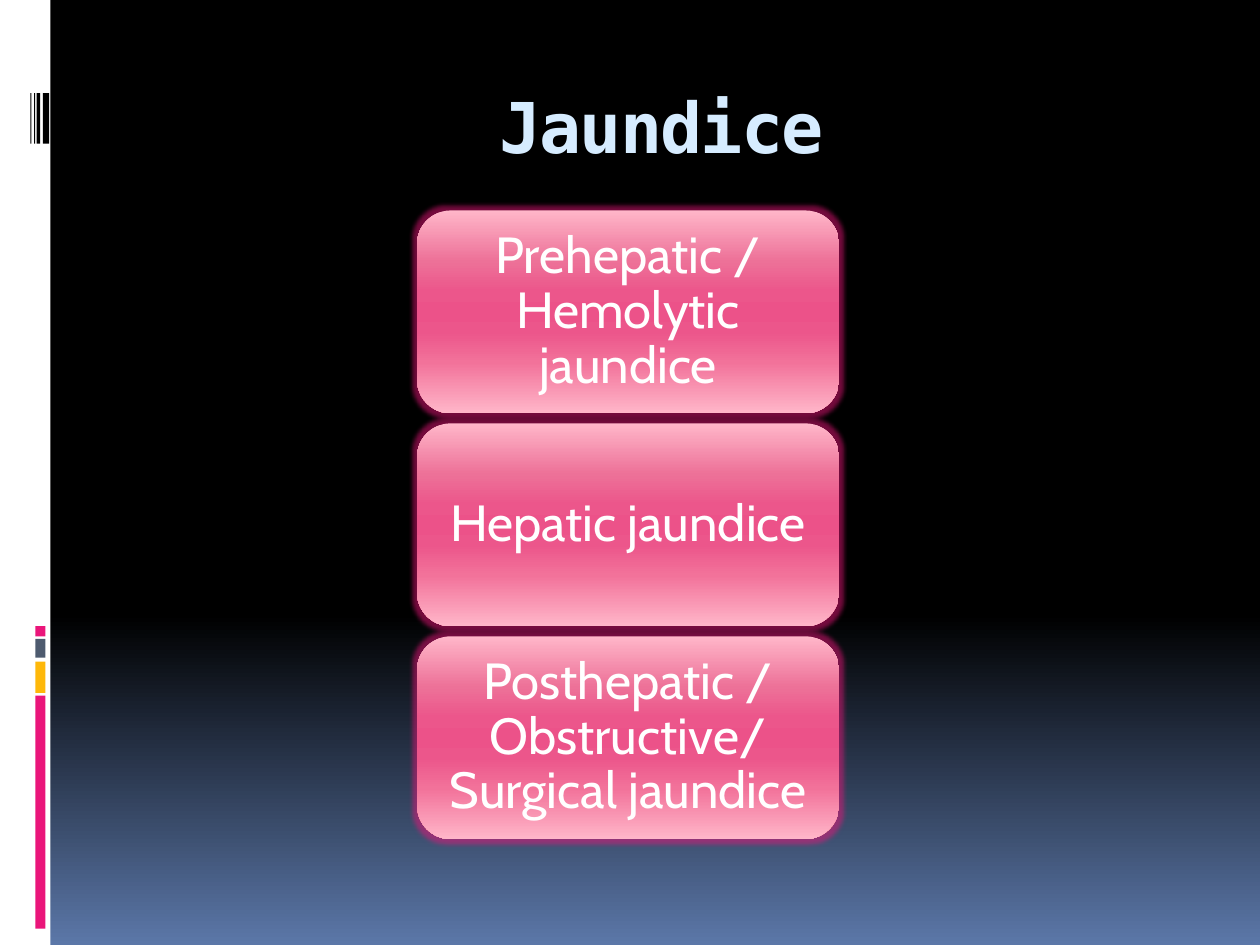
from pptx import Presentation
from pptx.dml.color import RGBColor
from pptx.enum.shapes import MSO_SHAPE
from pptx.enum.text import MSO_ANCHOR, PP_ALIGN
from pptx.oxml import parse_xml
from pptx.oxml.ns import nsdecls, qn
from pptx.util import Inches, Pt

RECTANGLE, ROUNDED = MSO_SHAPE.RECTANGLE, MSO_SHAPE.ROUNDED_RECTANGLE
CENTER, TOP, MIDDLE = PP_ALIGN.CENTER, MSO_ANCHOR.TOP, MSO_ANCHOR.MIDDLE

THEME = {
    "white": "FFFFFF", "black": "000000", "pink": "EA157A",
    "amber": "FEB80A", "slate": "4E5B6F", "title": "D6ECFF",
    "sky": [(0, "000000"), (65, "000000"), (100, "5B77A8")],
    "card": [(0, "FFB6C9"), (25, "ED7198"), (40, "EC568B"), (50, "EC5289"),
             (60, "EC568B"), (75, "F2729A"), (100, "FFB6C9")],
    "title_font": "DejaVu Sans Mono", "title_size": 40,
    "card_font": "Cabin", "card_size": 29,
}


def fill_gradient(fill, element, stops):
    """Fill from top to bottom with (percent, colour) stops."""
    fill.gradient()
    fill.gradient_angle = 270
    stop_list = next(element.iter(qn("a:gsLst")))
    for old_stop in list(stop_list):
        stop_list.remove(old_stop)
    for percent, colour in stops:
        stop_list.append(parse_xml(
            f'<a:gs {nsdecls("a")} pos="{percent * 1000}">'
            f'<a:srgbClr val="{colour}"/></a:gs>'))


def add_text(frame, text, font, size, colour):
    """Write one centred paragraph and return it with its run."""
    frame.word_wrap = True
    para = frame.paragraphs[0]
    para.alignment = CENTER
    span = para.add_run()
    span.text = text
    span.font.name, span.font.size = font, Pt(size)
    span.font.color.rgb = RGBColor.from_string(colour)
    return para, span


deck = Presentation()
deck.slide_width, deck.slide_height = Inches(10), Inches(7.5)
page = deck.slides.add_slide(deck.slide_layouts[6])
fill_gradient(page.background.fill, page.element, THEME["sky"])

# Side strip: white band, coloured blocks, thin black bars
strip = [(0, 0, 0.4, 7.5, "white")]
strip += [(0.28, top, 0.08, height, colour) for top, height, colour in (
    (5.52, 1.85, "pink"), (5.25, 0.25, "amber"),
    (5.07, 0.15, "slate"), (4.97, 0.08, "pink"))]
strip += [(left, 0.74, width, 0.4, "black") for left, width in (
    (0.34, 0.05), (0.29, 0.03), (0.27, 0.01), (0.24, 0.01))]
for left, top, width, height, colour in strip:
    bar = page.shapes.add_shape(
        RECTANGLE, Inches(left), Inches(top), Inches(width), Inches(height))
    bar.shadow.inherit = False
    bar.fill.solid()
    bar.fill.fore_color.rgb = RGBColor.from_string(THEME[colour])
    bar.line.fill.background()

# Title
title = page.shapes.add_textbox(Inches(1), Inches(0.56), Inches(8.5), Inches(1))
title.text_frame.vertical_anchor = TOP
title.text_frame.margin_top = Inches(0.1)
para, span = add_text(title.text_frame, "Jaundice", THEME["title_font"],
                      THEME["title_size"], THEME["title"])
span.font.bold = True
span.font._element.set("spc", "-100")

# Stack of glowing cards, one per type of jaundice
CARD_LEFT, CARD_TOP, CARD_WIDTH, CARD_HEIGHT = 3.31, 1.67, 3.35, 1.61
CARD_STEP = CARD_HEIGHT + 0.08
kinds = ["Prehepatic / Hemolytic jaundice", "Hepatic jaundice",
         "Posthepatic / Obstructive/ Surgical jaundice"]
for row, kind in enumerate(kinds):
    card = page.shapes.add_shape(
        ROUNDED, Inches(CARD_LEFT), Inches(CARD_TOP + row * CARD_STEP),
        Inches(CARD_WIDTH), Inches(CARD_HEIGHT))
    fill_gradient(card.fill, card.element, THEME["card"])
    card.line.fill.background()
    card.shadow.inherit = False
    next(card.element.iter(qn("a:effectLst"))).append(parse_xml(
        f'<a:glow {nsdecls("a")} rad="{Pt(5)}"><a:srgbClr val="{THEME["pink"]}">'
        '<a:alpha val="50000"/></a:srgbClr></a:glow>'))
    frame = card.text_frame
    frame.vertical_anchor = MIDDLE
    frame.margin_left = frame.margin_right = Inches(0.12)
    frame.margin_top = frame.margin_bottom = Inches(0.06)
    para, span = add_text(frame, kind, THEME["card_font"],
                          THEME["card_size"], THEME["white"])
    para.line_spacing = 0.9

deck.save("out.pptx")
